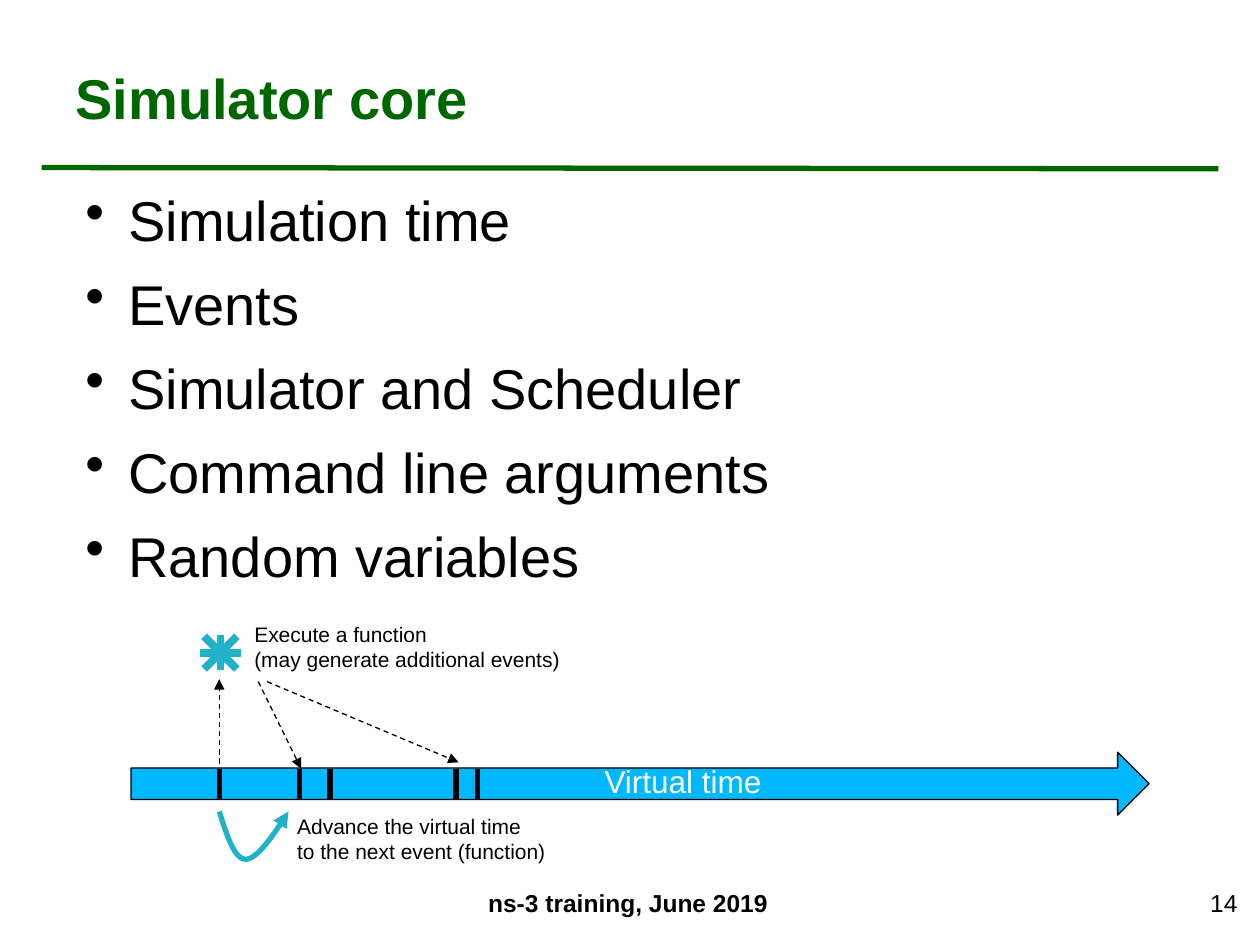
import pptx
import pptx.dml.color
import pptx.enum.dml
import pptx.enum.shapes
import pptx.enum.text
import pptx.oxml
import pptx.oxml.ns
import pptx.util
from pptx.util import Inches

COLORS = {"green": "006600", "black": "000000", "white": "FFFFFF",
          "sky": "00B8FF", "teal": "21B2C9"}
ALIGN = pptx.enum.text.PP_ALIGN
ANCHOR = pptx.enum.text.MSO_ANCHOR


def color(name):
    """Return the named colour."""
    return pptx.dml.color.RGBColor.from_string(COLORS[name])


def format_all(target, values):
    """Set each attribute in values on the target."""
    for name, value in values.items():
        setattr(target, name, value)


def add_tag(parent, tag, **values):
    """Append a drawing element with the given attributes."""
    child = pptx.oxml.parse_xml(f"<a:{tag} {pptx.oxml.ns.nsdecls('a')}/>")
    for name, value in values.items():
        child.set(name, str(value))
    parent.append(child)
    return child


def style_line(shape, hue, width, dash=False, arrow=False):
    """Style the stroke of a shape or connector."""
    shape.line.color.rgb = color(hue)
    shape.line.width = pptx.util.Pt(width)
    if dash:
        shape.line.dash_style = pptx.enum.dml.MSO_LINE.DASH
    if arrow:
        add_tag(shape.line._get_or_add_ln(), "tailEnd", type="triangle")


def draw_line(slide, start, end, hue, width, **extra):
    """Draw a straight line between two points in inches."""
    line = slide.shapes.add_connector(
        pptx.enum.shapes.MSO_CONNECTOR.STRAIGHT,
        *(Inches(v) for v in (*start, *end)))
    style_line(line, hue, width, **extra)
    add_tag(line._element.spPr, "effectLst")


def fill_text(shape, lines, size, hue="black", bold=False, align=ALIGN.LEFT,
              anchor=ANCHOR.TOP, wrap=True, bullet=False, space=0):
    """Write and format the lines of a shape."""
    frame = shape.text_frame
    format_all(frame, {"text": "\n".join(lines), "word_wrap": wrap,
                       "vertical_anchor": anchor})
    for index, para in enumerate(frame.paragraphs):
        format_all(para, {"alignment": align,
                          "space_before": pptx.util.Pt(space if index else 0)})
        if bullet:
            props = para._p.get_or_add_pPr()
            props.set("marL", str(Inches(0.34)))
            props.set("indent", str(Inches(-0.34)))
            add_tag(props, "buChar", char="•")
        format_all(para.font, {"name": "Arial", "size": pptx.util.Pt(size),
                               "bold": bold})
        para.font.color.rgb = color(hue)


def add_text(slide, box, lines, size, **style):
    """Add a text box."""
    shape = slide.shapes.add_textbox(*(Inches(v) for v in box))
    fill_text(shape, lines, size, **style)


def add_head(slide, box):
    """Place the title and the rule under it."""
    left, top, width, height = box
    title = slide.shapes.title
    spots = (left + 0.17, top, width - 0.37, height - 0.1)
    format_all(title, dict(zip(("left", "top", "width", "height"),
                               map(Inches, spots))))
    fill_text(title, ["Simulator core"], 32, hue="green", bold=True,
              anchor=ANCHOR.MIDDLE)
    base = top + height
    draw_line(slide, (left, base - 0.01), (left + width, base), "green", 3)


def add_list(slide, box):
    """Place the bullet list."""
    add_text(slide, box, ["Simulation time", "Events",
                          "Simulator and Scheduler", "Command line arguments",
                          "Random variables"], 32, bullet=True, space=9.6)


def add_star(slide, x, y):
    """Draw a star of four strokes centred on a point."""
    for dx, dy in ((0.13, 0.13), (0.13, -0.13), (0, 0.14), (0.16, 0)):
        draw_line(slide, (x - dx, y - dy), (x + dx, y + dy), "teal", 4.5)


def curve_points(points, steps=12):
    """Sample a cubic curve after its start."""
    for step in range(1, steps + 1):
        t = step / steps
        parts = ((1 - t) ** 3, 3 * t * (1 - t) ** 2, 3 * t * t * (1 - t), t ** 3)
        yield tuple(Inches(sum(w * p[axis] for w, p in zip(parts, points)))
                    for axis in (0, 1))


def add_hop(slide, x, y):
    """Draw the curved arrow to the next event."""
    low = (x + 0.21, y + 0.38)
    curves = [[(x, y), (x + 0.06, y + 0.19), (x + 0.12, y + 0.38), low],
              [low, (x + 0.3, y + 0.38), (x + 0.43, y + 0.19), (x + 0.55, y)]]
    pen = slide.shapes.build_freeform(Inches(x), Inches(y))
    for curve in curves:
        pen.add_line_segments(list(curve_points(curve)), close=False)
    hop = pen.convert_to_shape()
    hop.shadow.inherit = False
    hop.fill.background()
    style_line(hop, "teal", 3, arrow=True)


def add_time(slide, box):
    """Draw the time arrow with its events and notes."""
    left, top, width, height = box
    bar = top + 1.09
    arrow = slide.shapes.add_shape(
        pptx.enum.shapes.MSO_SHAPE.RIGHT_ARROW,
        *(Inches(v) for v in (left, bar, width, 0.5)))
    arrow.shadow.inherit = False
    arrow.fill.solid()
    arrow.fill.fore_color.rgb = color("sky")
    style_line(arrow, "black", 0.75)
    now = left + 0.7
    add_star(slide, now + 0.01, top + 0.3)
    for gap in (0, 0.64, 0.88, 1.88, 2.05):
        draw_line(slide, (now + gap, bar + 0.13), (now + gap, bar + 0.38),
                  "black", 3)
    links = (((0, 1.18), (0, 0.51)), ((0.31, 0.53), (0.65, 1.22)),
             ((0.38, 0.53), (1.9, 1.17)))
    for (x1, y1), (x2, y2) in links:
        draw_line(slide, (now + x1, top + y1), (now + x2, top + y2),
                  "black", 0.75, dash=True, arrow=True)
    add_hop(slide, now, top + 1.56)
    add_text(slide, (left + 0.88, top, 2.64, 0.5),
             ["Execute a function", "(may generate additional events)"], 12,
             wrap=False)
    add_text(slide, (left + 1.22, top + 1.53, 2.19, 0.5),
             ["Advance the virtual time", "to the next event (function)"], 12,
             wrap=False)
    add_text(slide, (left + 3.66, bar + 0.03, 1.46, 0.4), ["Virtual time"], 18,
             hue="white", wrap=False)


def add_foot(slide, box):
    """Place the footer and the page number."""
    left, top, width, height = box
    add_text(slide, (left, top, 3.13, height), ["ns-3 training, June 2019"],
             14, bold=True, align=ALIGN.CENTER)
    add_text(slide, (left + width - 2.3, top, 2.3, height), ["14"], 14,
             align=ALIGN.RIGHT)


def main():
    """Build and save the slide."""
    deck = pptx.Presentation()
    format_all(deck, {"slide_width": Inches(10), "slide_height": Inches(7.5)})
    slide = deck.slides.add_slide(deck.slide_layouts.get_by_name("Title Only"))
    add_head(slide, (0.33, 0.3, 9.34, 1.04))
    add_list(slide, (0.58, 1.42, 8.97, 5.33))
    add_time(slide, (1.04, 4.88, 8.08, 2.03))
    add_foot(slide, (3.42, 7, 6.5, 0.5))
    deck.save("out.pptx")


if __name__ == "__main__":
    main()
